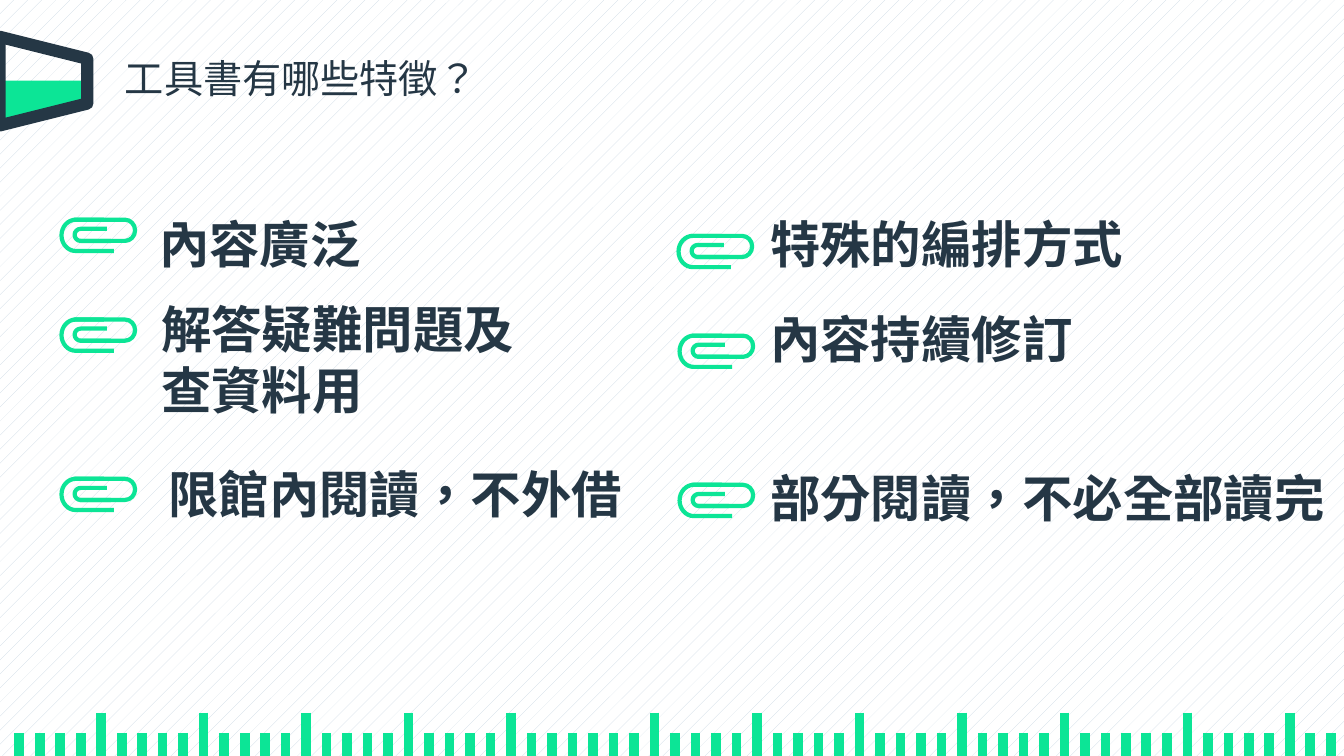
from dataclasses import dataclass
from itertools import chain

from lxml import etree
from pptx import Presentation
from pptx import util as u
from pptx.dml.color import RGBColor
from pptx.enum import dml, lang, shapes, text
from pptx.oxml.ns import qn


@dataclass(frozen=True)
class Theme:
    """Colours, font and sizes of the slide."""
    green: RGBColor = RGBColor.from_string("0CE596")
    ink: RGBColor = RGBColor.from_string("253745")
    hatch: RGBColor = RGBColor.from_string("CAD8E3")
    paper: RGBColor = RGBColor.from_string("FFFFFF")
    font: str = "Arial Narrow"
    title: int = 28
    body: int = 36
    clip_line: float = 3
    tick_line: float = 7
    flask_line: float = 8.75


THEME = Theme()
WIDTH, HEIGHT = 13.33, 7.5
ROUNDNESS = 0.55
CLIP_LOOPS = [
    (0.49, 0.19, 0.45, 0.21, 0.09, -0.06),
    (0.12, 0.63, 0.18, 0, 0.21, 0.1),
    (0.52, 0.14, 0.42, 0.31, 0, -0.14),
]
FEATURES = [
    ("內容廣泛", (1.48, 1.89, 2.22, 0.86), (0.61, 2.18), 1.3),
    ("解答疑難問題及\v查資料用", (1.5, 2.91, 3.74, 1.31), (0.61, 3.17), 1),
    ("限館內閱讀，不外借", (1.57, 4.37, 4.82, 0.86), (0.61, 4.75), 1.3),
    ("特殊的編排方式", (7.54, 1.89, 3.74, 0.86), (6.73, 2.34), 1.3),
    ("內容持續修訂", (7.54, 2.83, 3.23, 0.86), (6.74, 3.33), 1.3),
    ("部分閱讀，不必全部讀完", (7.54, 4.41, 5.76, 0.86), (6.74, 4.81), 1.3),
]


def add_text(s, box, words, size, spacing, bold=False, before=0):
    """Place one paragraph in a text box."""
    tf = s.shapes.add_textbox(*map(u.Inches, box)).text_frame
    tf.word_wrap = True
    tf.auto_size = text.MSO_AUTO_SIZE.SHAPE_TO_FIT_TEXT
    p = tf.paragraphs[0]
    p.text = words
    p.line_spacing = spacing
    p.space_before = u.Pt(before)
    p.font.name = THEME.font
    p.font.size = u.Pt(size)
    p.font.bold = bold
    p.font.color.rgb = THEME.ink
    for r in p.runs:
        r.font.language_id = lang.MSO_LANGUAGE_ID.TRADITIONAL_CHINESE


def add_outline(s, points, close):
    """Build a shadowless freeform through points given in inches."""
    start, *rest = [(u.Inches(x), u.Inches(y)) for x, y in points]
    builder = s.shapes.build_freeform(*start, scale=1.0)
    builder.add_line_segments(rest, close=close)
    sp = builder.convert_to_shape()
    sp.shadow.inherit = False
    return sp


def curve_segment(segment, begin, end, corner):
    """Turn a straight segment into a quarter ellipse bulging to a corner."""
    curve = etree.Element(qn("a:cubicBezTo"))
    handles = [tuple(a + ROUNDNESS * (c - a) for a, c in zip(point, corner))
               for point in (begin, end)]
    for x, y in [*handles, end]:
        etree.SubElement(curve, qn("a:pt"), x=str(round(x)), y=str(round(y)))
    segment.getparent().replace(segment, curve)


def add_background(s):
    """Fill the slide with the fine hatch."""
    fill = s.background.fill
    fill.patterned()
    fill.pattern = dml.MSO_PATTERN.PERCENT_5
    fill.fore_color.rgb = THEME.hatch
    fill.back_color.rgb = THEME.paper


def add_flask(s, left, top, width, height):
    """Draw the half-full flask lying at the left edge."""
    x, y = left + 0.06, top + 0.43
    liquid = [(x, y), (x + 0.87, y), (x + 0.87, y + 0.23), (x, y + 0.45)]
    sp = add_outline(s, liquid, True)
    sp.fill.solid()
    sp.fill.fore_color.rgb = THEME.green
    sp.line.fill.background()
    glass = s.shapes.add_shape(shapes.MSO_SHAPE.TRAPEZOID,
                               *map(u.Inches, (left, top, width, height)))
    glass.rotation = 90
    glass.shadow.inherit = False
    glass.fill.background()
    glass.line.color.rgb = THEME.ink
    glass.line.width = u.Pt(THEME.flask_line)
    etree.SubElement(glass.line.fill._xPr, qn("a:round"))


def add_ruler(s, left, bottom, width):
    """Draw the row of ruler ticks along the bottom edge."""
    last = 64
    tall = set(chain(range(4, 25, 5), range(31, 52, 5), range(57, 63, 5)))
    for i in range(last + 1):
        x = u.Inches(left + width * i / last)
        length = 0.43 if i in tall else 0.23
        tick = s.shapes.add_connector(shapes.MSO_CONNECTOR.STRAIGHT, x,
                                      u.Inches(bottom - length), x, u.Inches(bottom))
        tick.line.color.rgb = THEME.green
        tick.line.width = u.Pt(THEME.tick_line)
        etree.SubElement(tick.line.fill._xPr.getparent(), qn("a:effectLst"))


def add_clip(s, left, top):
    """Draw a paper clip from three open loops."""
    for start, turn, end, y1, y2, radius in CLIP_LOOPS:
        tip = (turn + radius, (y1 + y2) / 2)
        loop = [(start, y1), (turn, y1), tip, (turn, y2), (end, y2)]
        sp = add_outline(s, [(left + x, top + y) for x, y in loop], False)
        segments = list(sp._element.iter(qn("a:lnTo")))
        a, b, c = [(int(seg[0].get("x")), int(seg[0].get("y"))) for seg in segments[:3]]
        curve_segment(segments[1], a, b, (b[0], a[1]))
        curve_segment(segments[2], b, c, (b[0], c[1]))
        sp.fill.background()
        sp.line.color.rgb = THEME.green
        sp.line.width = u.Pt(THEME.clip_line)


def add_feature(s, words, box, clip, spacing):
    """Place one feature with its paper clip."""
    add_text(s, box, words, THEME.body, spacing, bold=True)
    add_clip(s, *clip)


def main():
    """Build and save the slide."""
    prs = Presentation()
    prs.slide_width, prs.slide_height = u.Inches(WIDTH), u.Inches(HEIGHT)
    s = prs.slides.add_slide(prs.slide_layouts[6])
    add_background(s)
    add_flask(s, -0.01, 0.37, 0.88, 0.87)
    add_ruler(s, 0.19, HEIGHT, 13.01)
    add_text(s, (1.14, 0.54, 4.09, 0.53), "工具書有哪些特徵？", THEME.title, 0.9, before=10)
    for feature in FEATURES:
        add_feature(s, *feature)
    prs.save("out.pptx")


if __name__ == "__main__":
    main()
